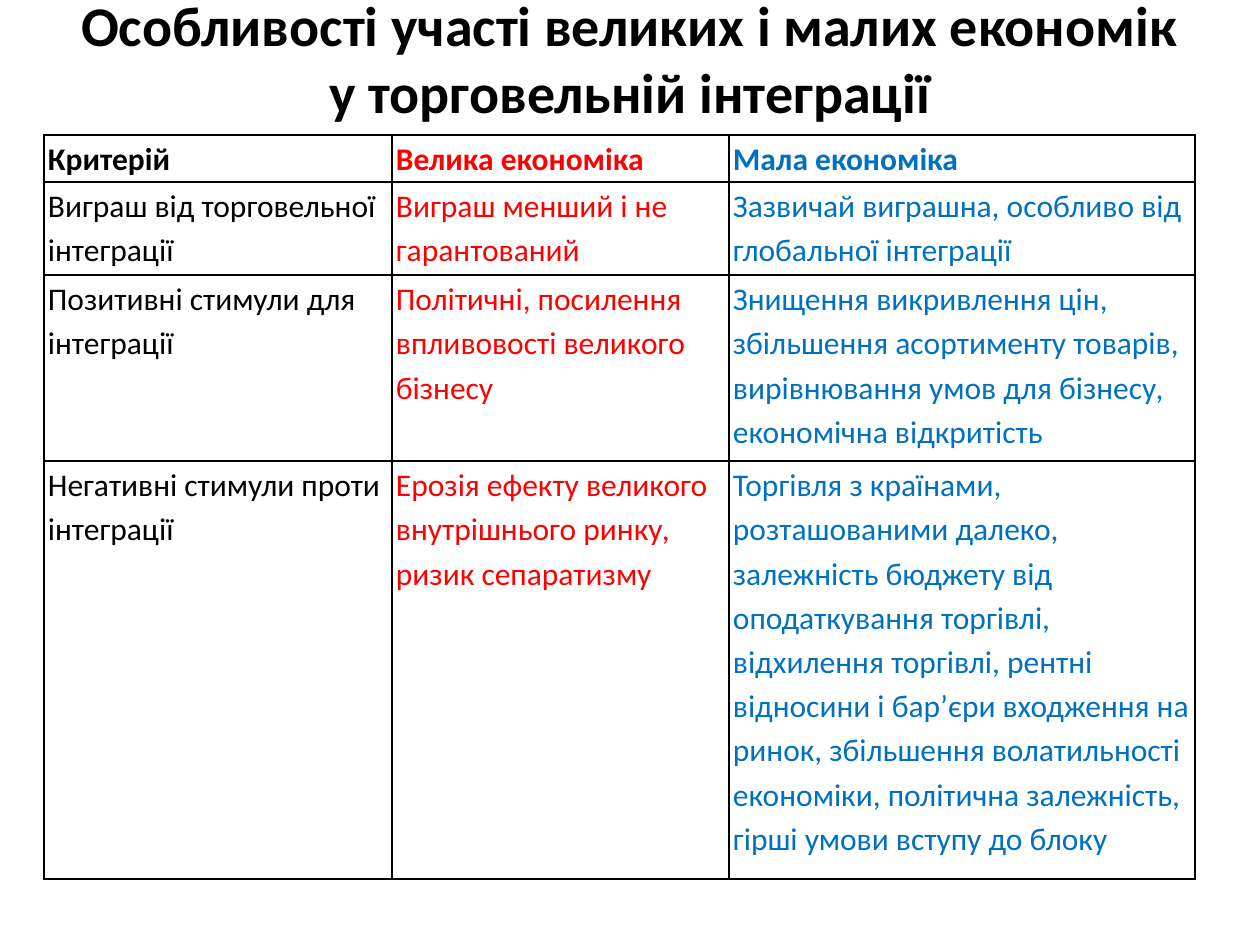
from lxml import etree
from pptx import Presentation
from pptx.dml.color import RGBColor
from pptx.enum.text import MSO_ANCHOR, MSO_AUTO_SIZE, PP_ALIGN
from pptx.oxml.ns import qn
from pptx.util import Emu, Pt

CENTER = PP_ALIGN.CENTER
MIDDLE = MSO_ANCHOR.MIDDLE
TOP = MSO_ANCHOR.TOP
NO_AUTOFIT = MSO_AUTO_SIZE.NONE

EMU_PER_PX = 914400 / 126
FONT = "Calibri"
COLORS = {"black": "000000", "large": "FF0000", "small": "0070C0"}
COLUMN_COLORS = ("black", "large", "small")
COLUMN_WIDTHS = (348, 337, 466)
ROW_HEIGHTS = (47, 93, 186, 418)

TITLE = "Особливості участі великих і малих економік у торговельній інтеграції"
ROWS = (
    ("Критерій", "Велика економіка", "Мала економіка"),
    (
        "Виграш від торговельної інтеграції",
        "Виграш менший і не гарантований",
        "Зазвичай виграшна, особливо від глобальної інтеграції",
    ),
    (
        "Позитивні стимули для інтеграції",
        "Політичні, посилення впливовості великого бізнесу",
        "Знищення викривлення цін, збільшення асортименту товарів, "
        "вирівнювання умов для бізнесу, економічна відкритість",
    ),
    (
        "Негативні стимули проти інтеграції",
        "Ерозія ефекту великого внутрішнього ринку, ризик сепаратизму",
        "Торгівля з країнами, розташованими далеко, залежність бюджету від "
        "оподаткування торгівлі, відхилення торгівлі, рентні відносини і "
        "бар’єри входження на ринок, збільшення волатильності економіки, "
        "політична залежність, гірші умови вступу до блоку",
    ),
)


def px(value):
    return Emu(round(value * EMU_PER_PX))


def add_run(paragraph, text, size, color, bold):
    run = paragraph.add_run()
    run.text = text
    run.font.name = FONT
    run.font.size = Pt(size)
    run.font.bold = bold
    run.font.color.rgb = RGBColor.from_string(COLORS[color])


def set_title(slide):
    title = slide.shapes.title
    title.left, title.top, title.width, title.height = map(px, (63, 38, 1134, 107))
    frame = title.text_frame
    frame.word_wrap = True
    frame.auto_size = NO_AUTOFIT
    frame.vertical_anchor = MIDDLE
    frame.margin_top = px(6)
    frame.margin_bottom = px(73)  # lifts the two lines clear of the table
    paragraph = frame.paragraphs[0]
    paragraph.alignment = CENTER
    add_run(paragraph, TITLE, 32, "black", True)


def set_borders(cell):
    """Draw a thin black line on each side; the lines precede the fill in the XML."""
    properties = cell._tc.get_or_add_tcPr()
    for position, side in enumerate(("a:lnL", "a:lnR", "a:lnT", "a:lnB")):
        line = etree.Element(qn(side), w=str(Pt(1)))
        fill = etree.SubElement(line, qn("a:solidFill"))
        etree.SubElement(fill, qn("a:srgbClr"), val=COLORS["black"])
        properties.insert(position, line)


def fill_cell(cell, text, color, bold):
    cell.fill.background()
    cell.margin_left = cell.margin_right = px(4)
    cell.margin_top = cell.margin_bottom = 0
    cell.vertical_anchor = TOP
    paragraph = cell.text_frame.paragraphs[0]
    paragraph.line_spacing = 1.15
    add_run(paragraph, text, 18, color, bold)
    set_borders(cell)


def add_comparison_table(slide):
    table = slide.shapes.add_table(
        len(ROWS), len(COLUMN_WIDTHS), px(44), px(135),
        px(sum(COLUMN_WIDTHS)), px(sum(ROW_HEIGHTS)),
    ).table
    table.first_row = table.horz_banding = False
    for column, width in zip(table.columns, COLUMN_WIDTHS):
        column.width = px(width)
    for row_index, (row, height) in enumerate(zip(table.rows, ROW_HEIGHTS)):
        row.height = px(height)
        for cell, text, color in zip(row.cells, ROWS[row_index], COLUMN_COLORS):
            fill_cell(cell, text, color, bold=row_index == 0)


def main():
    presentation = Presentation()
    presentation.slide_width = px(1260)
    presentation.slide_height = px(945)
    slide = presentation.slides.add_slide(presentation.slide_layouts[5])
    set_title(slide)
    add_comparison_table(slide)
    presentation.save("out.pptx")


if __name__ == "__main__":
    main()
